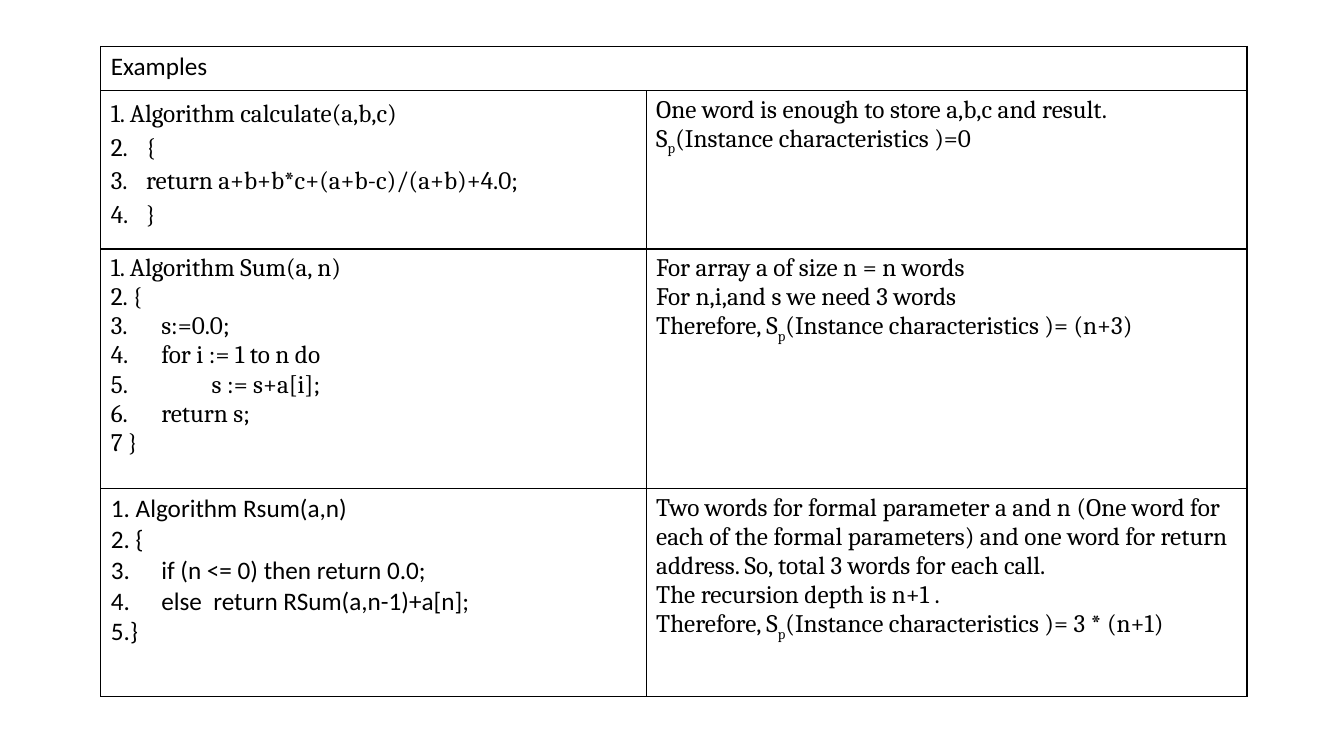
import pptx
import pptx.util
import pptx.dml.color
import pptx.oxml
import pptx.oxml.ns

BLACK = pptx.dml.color.RGBColor(0, 0, 0)
WHITE = pptx.dml.color.RGBColor(255, 255, 255)
SANS = "Calibri"
SERIF = "Cambria"
SUB = "_"

CODE_ONE = [
    "1. Algorithm calculate(a,b,c)",
    "2.\t{",
    "3.\treturn a+b+b*c+(a+b-c)/(a+b)+4.0;",
    "4.\t}",
]
NOTE_ONE = [
    "One word is enough to store a,b,c and result.",
    "S_p_(Instance characteristics )=0",
]
CODE_TWO = [
    "1. Algorithm Sum(a, n)",
    "2. {",
    "3. \ts:=0.0;",
    "4.\tfor i := 1 to n do",
    "5. \t\ts := s+a[i];",
    "6.\treturn s;",
    "7 }",
]
NOTE_TWO = [
    "For array a of size n = n words",
    "For n,i,and s we need 3 words",
    "Therefore, S_p_(Instance characteristics )= (n+3)",
]
CODE_THREE = [
    "1. Algorithm Rsum(a,n)",
    "2. {",
    "3.\tif (n <= 0) then return 0.0;",
    "4.\telse  return RSum(a,n-1)+a[n];",
    "5.}",
]
NOTE_THREE = [
    "Two words for formal parameter a and n (One word for each of the formal "
    "parameters) and one word for return address. So, total 3 words for each call.",
    "The recursion depth is n+1 .",
    "Therefore, S_p_(Instance characteristics )= 3 * (n+1)",
]


class Deck:
    size = pptx.util.Pt(18)
    line = pptx.util.Pt(1)
    brace = pptx.util.Inches(0.35)

    def __init__(self):
        self.show = pptx.Presentation()
        self.show.slide_width = pptx.util.Inches(13.33)
        self.show.slide_height = pptx.util.Inches(7.5)
        self.slide = self.show.slides.add_slide(self.show.slide_layouts[6])

    def across(self, share):
        return round(self.show.slide_width * share / 100)

    def down(self, share):
        return round(self.show.slide_height * share / 100)

    def table(self, left, top, cols, rows):
        frame = self.slide.shapes.add_table(
            len(rows), len(cols), self.across(left), self.down(top),
            self.across(sum(cols)), self.down(sum(rows)))
        grid = frame.table
        grid.first_row = False
        grid.horz_banding = False
        for col, share in zip(grid.columns, cols):
            col.width = self.across(share)
        for row, share in zip(grid.rows, rows):
            row.height = self.down(share)
        for cell in grid.iter_cells():
            cell.fill.solid()
            cell.fill.fore_color.rgb = WHITE
            self.border(cell)
        return grid

    def border(self, cell):
        props = cell._tc.get_or_add_tcPr()
        for spot, side in enumerate("LRTB"):
            props.insert(spot, pptx.oxml.parse_xml(
                f'<a:ln{side} {pptx.oxml.ns.nsdecls("a")} w="{self.line}">'
                f'<a:solidFill><a:srgbClr val="{BLACK}"/></a:solidFill>'
                f'</a:ln{side}>'))

    def label(self, cell, lines, face, space=None):
        frame = cell.text_frame
        for spot, text in enumerate(lines):
            para = frame.add_paragraph() if spot else frame.paragraphs[0]
            if space:
                para.line_spacing = space
            if text.endswith(("\t{", "\t}")):
                self.tab(para)
            for part, words in enumerate(text.split(SUB)):
                self.run(para, words, face, part % 2 == 1)

    def tab(self, para):
        para._p.get_or_add_pPr().append(pptx.oxml.parse_xml(
            f'<a:tabLst {pptx.oxml.ns.nsdecls("a")}>'
            f'<a:tab pos="{self.brace}" algn="l"/></a:tabLst>'))

    def run(self, para, words, face, low):
        run = para.add_run()
        run.text = words
        run.font.name = face
        run.font.size = self.size
        run.font.color.rgb = BLACK
        if low:
            run._r.get_or_add_rPr().set("baseline", "-25000")


def main():
    deck = Deck()
    grid = deck.table(7.5, 6.13, [40.58, 44.71], [5.87, 20.93, 31.73, 27.47])
    grid.cell(0, 0).merge(grid.cell(0, 1))
    deck.label(grid.cell(0, 0), ["Examples"], SANS)
    body = [
        (CODE_ONE, SERIF, 1.15, NOTE_ONE),
        (CODE_TWO, SERIF, None, NOTE_TWO),
        (CODE_THREE, SANS, None, NOTE_THREE),
    ]
    for row, (code, face, space, note) in enumerate(body, 1):
        deck.label(grid.cell(row, 0), code, face, space)
        deck.label(grid.cell(row, 1), note, SERIF)
    deck.show.save("out.pptx")


if __name__ == "__main__":
    main()
